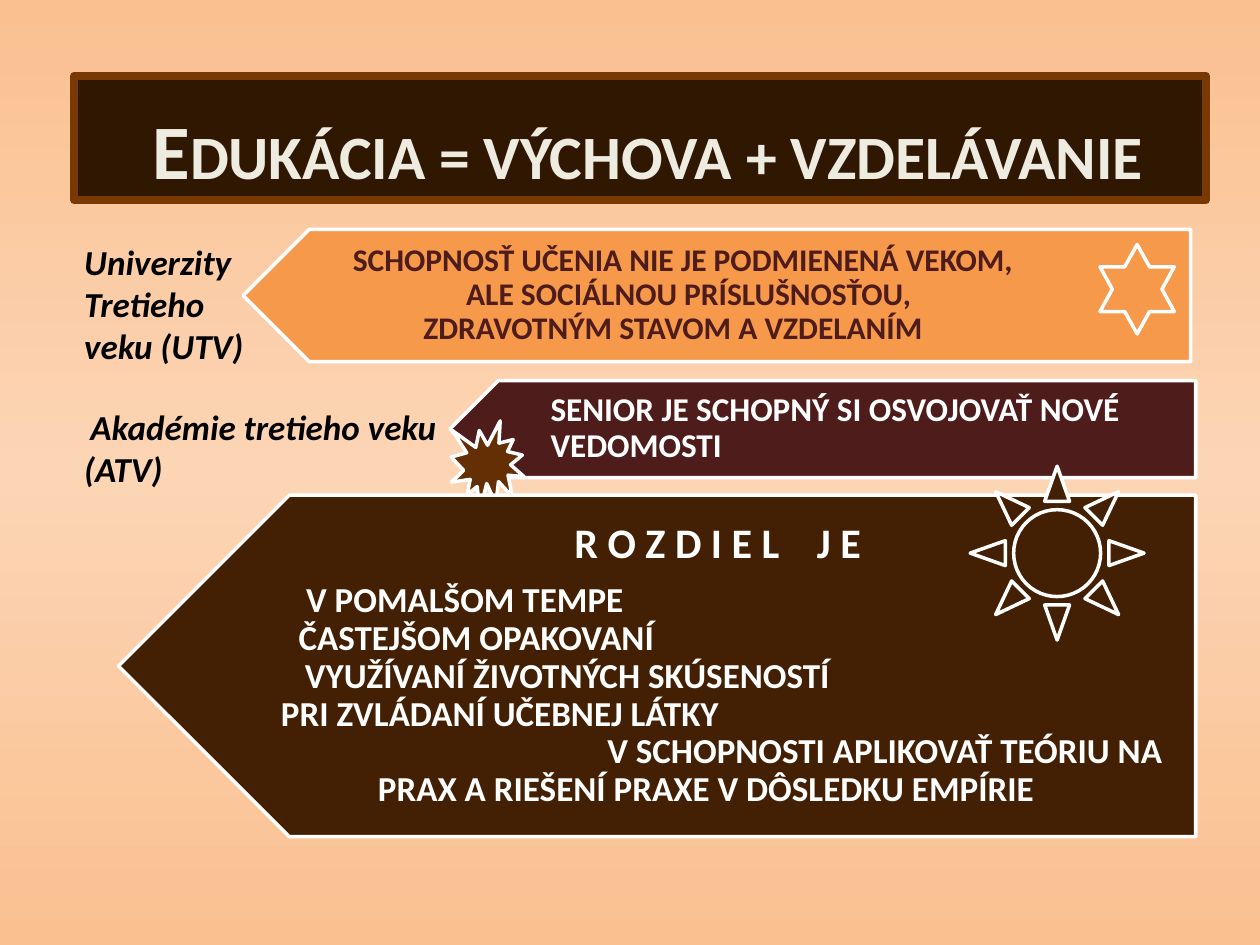
from copy import deepcopy

from pptx import Presentation
from pptx.dml.color import RGBColor
from pptx.enum.shapes import MSO_SHAPE
from pptx.enum.text import MSO_ANCHOR, MSO_AUTO_SIZE, PP_ALIGN
from pptx.util import Inches, Pt

ARROW, STAR = MSO_SHAPE.PENTAGON, MSO_SHAPE.STAR_6_POINT
BURST, SUN = MSO_SHAPE.EXPLOSION1, MSO_SHAPE.SUN
MIDDLE, TOP = MSO_ANCHOR.MIDDLE, MSO_ANCHOR.TOP

FONT = "Calibri"
COLORS = {
    "edge": "FAC090", "glow": "FCD5B5", "white": "FFFFFF", "black": "000000",
    "orange": "F7994B", "wine": "4D1C1B", "rust": "642F04", "brown": "432003",
    "title_fill": "301702", "title_line": "793905", "cream": "EEECE1",
}

# Content: places are left, top, width, height in inches
TITLE = "Edukácia = výchova + vzdelávanie"
TITLE_PLACE = (0.59, 0.6, 8.98, 0.99)

# Each line: text, size, left indent, space before, space after
LABELS_PLACE = (0.57, 1.86, 3.23, 2.09)
LABELS = [
    ("Univerzity", 20, 0, 0, 0),
    ("Tretieho", 20, 0, 0, 0),
    ("veku (UTV)", 20, 0, 0, 0),
    ("Akadémie tretieho veku", 20, 0.05, 22, 0),
    ("(ATV)", 20, 0, 0, 0),
]
# text_shift is where the text area starts, measured from the arrow tip
BANNERS = [
    dict(place=(1.93, 1.82, 7.52, 1.05), fill="orange", ink="wine",
         text_shift=0.26, right_inset=0.14,
         lines=[
             ("SCHOPNOSŤ UČENIA NIE JE PODMIENENÁ VEKOM,", 18, 0, 0, 0),
             ("ALE SOCIÁLNOU PRÍSLUŠNOSŤOU,", 18, 0.9, 0, 0),
             ("ZDRAVOTNÝM STAVOM A VZDELANÍM", 18, 0.56, 0, 0),
         ],
         ornament=(STAR, (8.73, 1.94, 0.59, 0.71), "orange")),
    dict(place=(3.57, 3.02, 5.92, 0.77), fill="wine", ink="white",
         text_shift=0.19, right_inset=0.15,
         lines=[("SENIOR JE SCHOPNÝ SI OSVOJOVAŤ NOVÉ VEDOMOSTI", 19, 0, 0, 0)],
         ornament=(BURST, (3.58, 3.34, 0.58, 0.72), "rust")),
    dict(place=(0.94, 3.93, 8.55, 2.71), fill="brown", ink="white",
         text_shift=0.68, right_inset=0.19,
         lines=[
             (("R O Z D I E L", " ", "J E"), 24, 2.33, 0, 8.4),
             ("V POMALŠOM TEMPE", 20, 0.2, 0, 0),
             ("ČASTEJŠOM OPAKOVANÍ", 20, 0.14, 0, 0),
             ("VYUŽÍVANÍ ŽIVOTNÝCH SKÚSENOSTÍ", 20, 0.19, 0, 0),
             ("PRI ZVLÁDANÍ UČEBNEJ LÁTKY", 20, 0, 0, 0),
             ("V SCHOPNOSTI APLIKOVAŤ TEÓRIU NA", 20, 2.59, 0, 0),
             ("PRAX A RIEŠENÍ PRAXE V DÔSLEDKU EMPÍRIE", 20, 0.77, 0, 0),
         ],
         ornament=(SUN, (7.7, 3.7, 1.38, 1.38), "brown")),
]
WORD_GAP = 1600  # wide gap between spaced-out words, hundredths of a point


def color(name):
    return RGBColor.from_string(COLORS[name])


def inches(place):
    return [Inches(value) for value in place]


def paint(shape, fill, line, width):
    shape.fill.solid()
    shape.fill.fore_color.rgb = color(fill)
    shape.line.color.rgb = color(line)
    shape.line.width = Pt(width)


def add_span(para, text, size, ink, italic=False):
    span = para.add_run()
    span.text = text
    span.font.name, span.font.size = FONT, Pt(size)
    span.font.bold, span.font.italic = True, italic
    span.font.color.rgb = color(ink)
    return span


def set_frame(frame, insets, anchor):
    frame.word_wrap = True
    frame.auto_size = MSO_AUTO_SIZE.NONE
    frame.vertical_anchor = anchor
    (frame.margin_left, frame.margin_top,
     frame.margin_right, frame.margin_bottom) = inches(insets)


def add_shape(page, kind, place, fill):
    shape = page.shapes.add_shape(kind, *inches(place))
    shape.shadow.inherit = False
    paint(shape, fill, "white", 2)
    return shape


def add_lines(page, place, insets, anchor, lines, ink, spacing=1.0, italic=False):
    frame = page.shapes.add_textbox(*inches(place)).text_frame
    set_frame(frame, insets, anchor)
    for number, (text, size, indent, before, after) in enumerate(lines):
        para = frame.add_paragraph() if number else frame.paragraphs[0]
        para.line_spacing = spacing
        para.space_before, para.space_after = Pt(before), Pt(after)
        para._p.get_or_add_pPr().set("marL", str(Inches(indent)))
        for part in ([text] if isinstance(text, str) else text):
            span = add_span(para, part, size, ink, italic)
            if part == " ":
                span.font._element.set("spc", str(WORD_GAP))


def add_background(page):
    fill = page.background.fill
    fill.gradient()
    fill.gradient_angle = 270
    stops = page.element.xpath(".//a:gsLst")[0]
    stops.insert(1, deepcopy(stops[0]))
    for stop, share, name in zip(fill.gradient_stops, (0, 0.5, 1),
                                 ("edge", "glow", "edge")):
        stop.position = share
        stop.color.rgb = color(name)


def add_title(page):
    box = page.shapes.title
    box.left, box.top, box.width, box.height = inches(TITLE_PLACE)
    paint(box, "title_fill", "title_line", 4.5)
    set_frame(box.text_frame, (0.22, 0.17, 0.1, 0), MIDDLE)
    para = box.text_frame.paragraphs[0]
    para.alignment = PP_ALIGN.CENTER
    span = add_span(para, TITLE, 44, "cream")
    span.font._element.set("cap", "small")


def add_banner(page, banner):
    left, top, width, height = banner["place"]
    add_shape(page, ARROW, banner["place"], banner["fill"]).rotation = 180
    shift = banner["text_shift"]
    add_lines(page, (left + shift, top, width - shift, height),
              (0.61, 0.08, banner["right_inset"], 0.08), MIDDLE,
              banner["lines"], banner["ink"], spacing=0.9)
    add_shape(page, *banner["ornament"])


def main():
    deck = Presentation()
    deck.slide_width, deck.slide_height = Inches(10), Inches(7.5)
    page = deck.slides.add_slide(deck.slide_layouts[5])
    add_background(page)
    add_title(page)
    for banner in BANNERS:
        add_banner(page, banner)
    add_lines(page, LABELS_PLACE, (0.1, 0.05, 0.1, 0.05), TOP,
              LABELS, "black", italic=True)
    deck.save("out.pptx")


if __name__ == "__main__":
    main()
